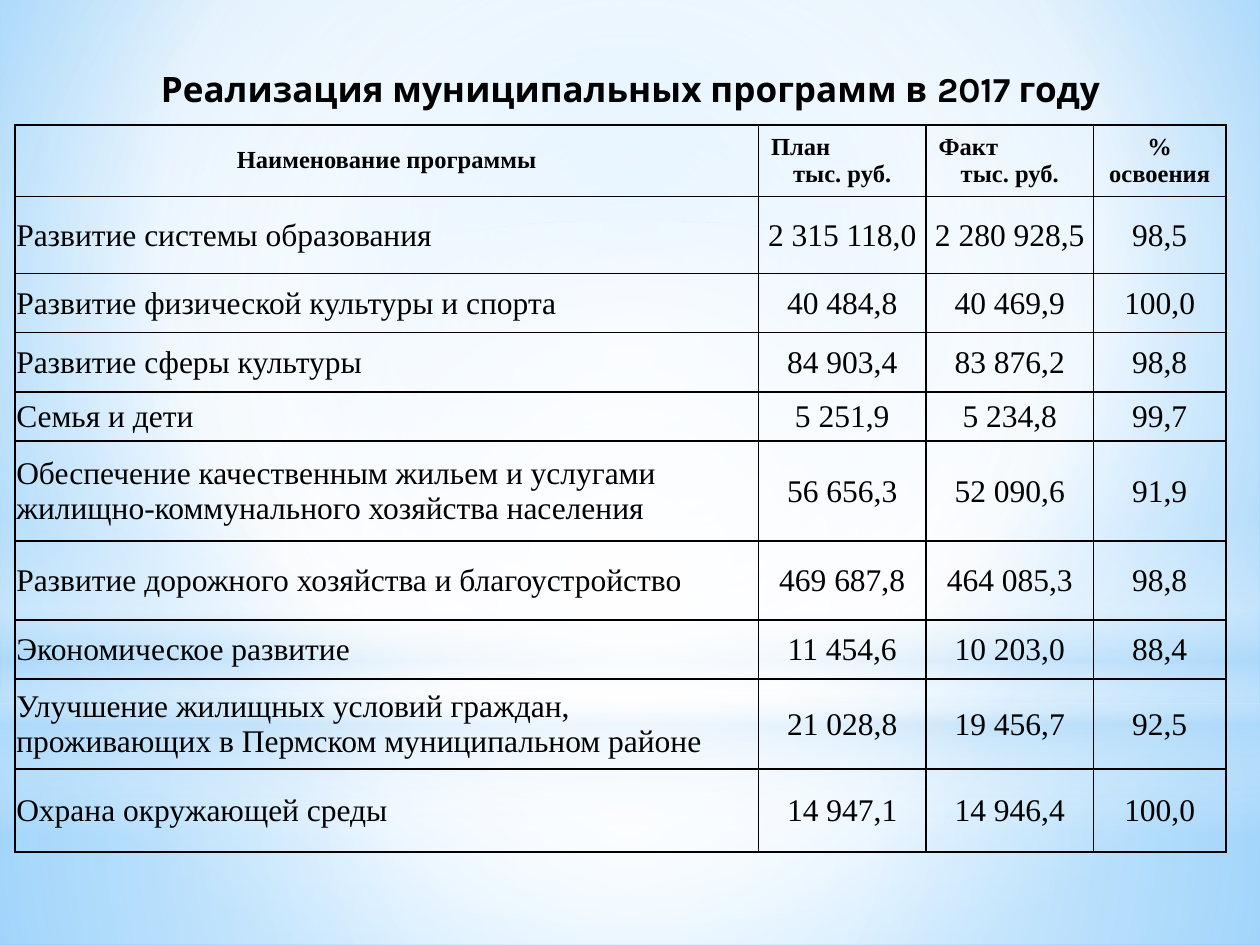
from lxml import etree
from pptx import Presentation
from pptx.dml.color import RGBColor
from pptx.enum.shapes import MSO_SHAPE
from pptx.enum.text import MSO_ANCHOR, PP_ALIGN
from pptx.oxml import parse_xml
from pptx.oxml.ns import qn
from pptx.util import Pt

RECT, OVAL = MSO_SHAPE.RECTANGLE, MSO_SHAPE.OVAL
MIDDLE = MSO_ANCHOR.MIDDLE
LEFT, CENTER = PP_ALIGN.LEFT, PP_ALIGN.CENTER
SERIF = "Times New Roman"
SPACE = "http://schemas.openxmlformats.org/drawingml/2006/main"
MID = (50, 50, 50, 50)

GLOWS = [
    (RECT, (0, 401.8, 720, 138.2), MID,
     [(0, "FFFFFF", 91), (37, "FFFFFF", 76), (100, "B4DCFA", 79)]),
    (RECT, (0, 0, 720, 401.8), MID,
     [(0, "FFFFFF", 89), (48, "FFFFFF", 62), (100, "B4DCFA", 79)]),
    (RECT, (0, 296.6, 720, 180), None,
     [(0, "FFFFFF", 0), (29, "FFFFFF", 30), (45, "B4DCFA", 40),
      (55, "FFFFFF", 26), (65, "B4DCFA", 60), (100, "FFFFFF", 0)]),
    (OVAL, (0, 126, 720, 401.8), MID,
     [(0, "FFFFFF", 100), (56, "FFFFFF", 0)]),
]
SKY = [(0, "9ED5FF", 100), (60, "FFFFFF", 100), (100, "5BB9FF", 100)]

WIDTHS = [424.8, 95.76, 95.76, 75.6]
HEADS = [["Наименование программы"], ["План", "тыс. руб."],
         ["Факт", "тыс. руб."], ["% освоения"]]
HEAD_HIGH = 41
ROWS = [
    (43.9, "Развитие системы образования", "2 315 118,0", "2 280 928,5", "98,5"),
    (33.9, "Развитие физической культуры и спорта", "40 484,8", "40 469,9", "100,0"),
    (33.9, "Развитие сферы культуры", "84 903,4", "83 876,2", "98,8"),
    (28.2, "Семья и дети", "5 251,9", "5 234,8", "99,7"),
    (57, "Обеспечение качественным жильем и услугами жилищно-коммунального "
     "хозяйства населения", "56 656,3", "52 090,6", "91,9"),
    (45.2, "Развитие дорожного хозяйства и благоустройство",
     "469 687,8", "464 085,3", "98,8"),
    (33.9, "Экономическое развитие", "11 454,6", "10 203,0", "88,4"),
    (51.2, "Улучшение жилищных условий граждан, проживающих в Пермском "
     "муниципальном районе", "21 028,8", "19 456,7", "92,5"),
    (47.6, "Охрана окружающей среды", "14 947,1", "14 946,4", "100,0"),
]


def tint(code):
    """Return the colour for a hex string."""
    return RGBColor.from_string(code)


def blend(root, fill, stops, focus):
    """Give the fill under root a gradient, round a focus or straight down."""
    fill.solid()
    marks = "".join(
        f'<a:gs pos="{pos * 1000}"><a:srgbClr val="{tint(code)}">'
        f'<a:alpha val="{alpha * 1000}"/></a:srgbClr></a:gs>'
        for pos, code, alpha in stops)
    if focus:
        sides = " ".join(f'{side}="{part * 1000}"' for side, part in zip("ltrb", focus))
        way = f'<a:path path="circle"><a:fillToRect {sides}/></a:path>'
    else:
        way = '<a:lin ang="5400000" scaled="0"/>'
    old = root.find(".//" + qn("a:solidFill"))
    old.getparent().replace(old, parse_xml(
        f'<a:gradFill xmlns:a="{SPACE}" rotWithShape="1">'
        f'<a:gsLst>{marks}</a:gsLst>{way}</a:gradFill>'))


def scene(slide):
    """Paint the sky and the soft glows over it."""
    blend(slide.background._cSld, slide.background.fill, SKY, (20, 10, 20, 60))
    for kind, box, focus, stops in GLOWS:
        shape = slide.shapes.add_shape(kind, *map(Pt, box))
        shape.shadow.inherit = False
        shape.line.fill.background()
        blend(shape._element.spPr, shape.fill, stops, focus)


def write(frame, lines, sides, size, bold, face=SERIF):
    """Write one paragraph a line, each with its own alignment."""
    frame.text = "\n".join(lines)
    for para, side in zip(frame.paragraphs, sides):
        para.alignment = side
        font = para.font
        font.name, font.size, font.bold = face, Pt(size), bold
        font.color.rgb = tint("000000")


def title(slide, box):
    """Place the heading in the box."""
    frame = slide.shapes.add_textbox(*map(Pt, box)).text_frame
    frame.word_wrap = True
    frame.vertical_anchor = MIDDLE
    write(frame, ["Реализация муниципальных программ в 2017 году"],
          [CENTER], 20, True, "Karla")


def frame_cell(cell, wide, top, low):
    """Clear the fill, set the margins and rule all four sides."""
    cell.vertical_anchor = MIDDLE
    cell.margin_left = cell.margin_right = Pt(wide)
    cell.margin_top, cell.margin_bottom = Pt(top), Pt(low)
    cell.fill.background()
    props = cell._tc.get_or_add_tcPr()
    for spot, side in enumerate("LRTB"):
        line = etree.Element(qn(f"a:ln{side}"), w=str(Pt(1)))
        ink = etree.SubElement(line, qn("a:solidFill"))
        etree.SubElement(ink, qn("a:srgbClr"), val="000000")
        props.insert(spot, line)


def grid(slide, box):
    """Place the table of programmes in the box."""
    table = slide.shapes.add_table(
        len(ROWS) + 1, len(WIDTHS), *map(Pt, box)).table
    table.first_row = table.horz_banding = False
    for col, width in zip(table.columns, WIDTHS):
        col.width = Pt(width)
    table.rows[0].height = Pt(HEAD_HIGH)
    for col, lines in enumerate(HEADS):
        cell = table.cell(0, col)
        frame_cell(cell, 7.2, 3.6, 3.6)
        sides = [LEFT, CENTER] if len(lines) > 1 else [CENTER]
        write(cell.text_frame, lines, sides, 14, True)
    for row, (height, *texts) in enumerate(ROWS, 1):
        table.rows[row].height = Pt(height)
        for col, text in enumerate(texts):
            cell = table.cell(row, col)
            frame_cell(cell, 0.72, 0.72, 0)
            write(cell.text_frame, [text], [CENTER if col else LEFT], 18, False)


def main():
    """Build the slide and save it."""
    deck = Presentation()
    deck.slide_width, deck.slide_height = Pt(720), Pt(540)
    slide = deck.slides.add_slide(deck.slide_layouts[6])
    scene(slide)
    title(slide, (39.6, 33.8, 641.5, 33.8))
    grid(slide, (8.6, 71.3, sum(WIDTHS), HEAD_HIGH + sum(row[0] for row in ROWS)))
    deck.save("out.pptx")


if __name__ == "__main__":
    main()
